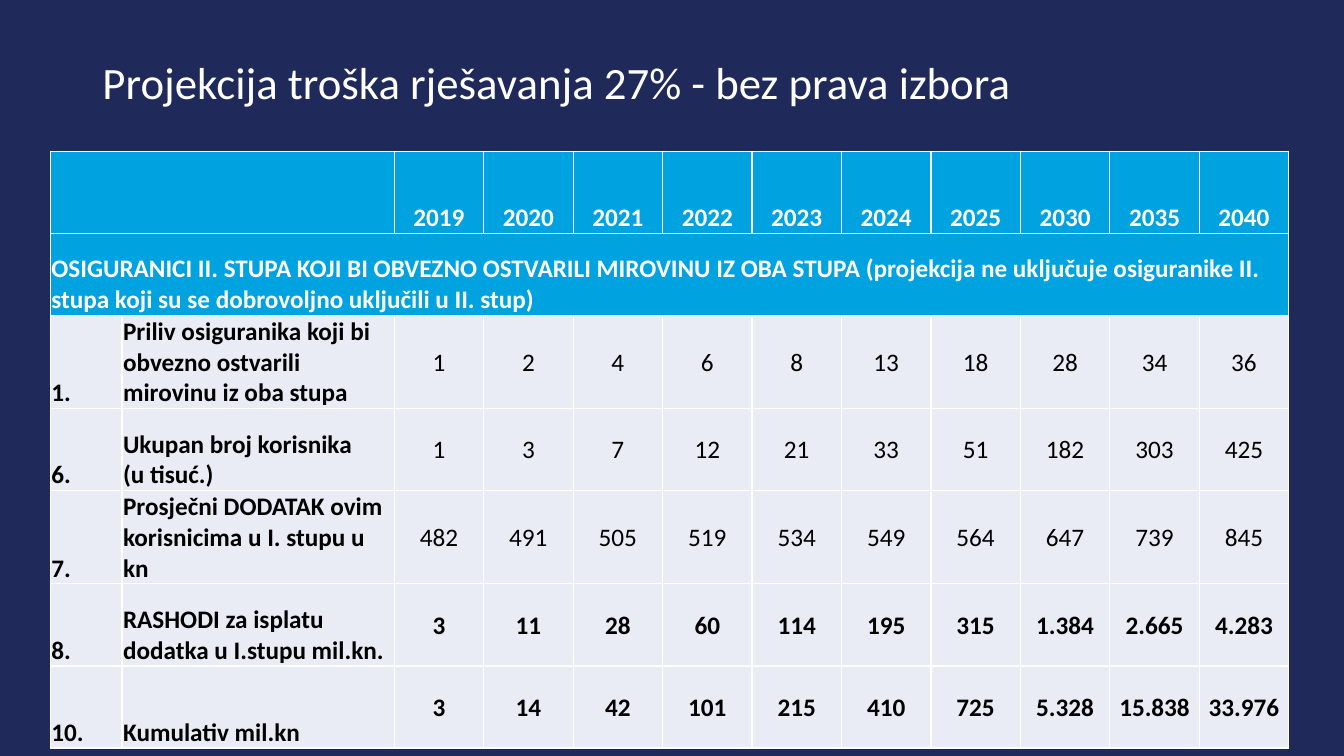
from lxml import etree
from pptx import Presentation
from pptx import util as u
from pptx.dml.color import RGBColor
from pptx.enum import text
from pptx.oxml.ns import qn

NAVY = RGBColor(0x1F, 0x29, 0x5A)
BLUE = RGBColor(0x00, 0xA3, 0xE0)
PALE = RGBColor(0xE9, 0xEB, 0xF5)
WHITE = RGBColor(0xFF, 0xFF, 0xFF)
BLACK = RGBColor(0x00, 0x00, 0x00)
LEFT, CENTER = text.PP_ALIGN.LEFT, text.PP_ALIGN.CENTER
MIDDLE, BOTTOM = text.MSO_ANCHOR.MIDDLE, text.MSO_ANCHOR.BOTTOM

TITLE = "Projekcija troška rješavanja 27% - bez prava izbora"
SECTION = ("OSIGURANICI II. STUPA KOJI BI OBVEZNO OSTVARILI MIROVINU IZ OBA STUPA "
           "(projekcija ne uključuje osiguranike II. stupa koji su se dobrovoljno "
           "uključili u II. stup)")
YEARS = "2019 2020 2021 2022 2023 2024 2025 2030 2035 2040".split()
ROWS = [
    ("1.", "Priliv osiguranika koji bi obvezno ostvarili mirovinu iz oba stupa",
     "1 2 4 6 8 13 18 28 34 36", False),
    ("6.", "Ukupan broj korisnika\n(u tisuć.)",
     "1 3 7 12 21 33 51 182 303 425", False),
    ("7.", "Prosječni DODATAK ovim korisnicima u I. stupu u kn",
     "482 491 505 519 534 549 564 647 739 845", False),
    ("8.", "RASHODI za isplatu dodatka u I.stupu mil.kn.",
     "3 11 28 60 114 195 315 1.384 2.665 4.283", True),
    ("10.", "Kumulativ mil.kn",
     "3 14 42 101 215 410 725 5.328 15.838 33.976", True),
]
COLUMNS = [51.2, 194.4] + [63.9] * len(YEARS)
ROW_HEIGHT = 58.6


def write(tf, content, size=18, color=BLACK, bold=False, align=LEFT, spacing=None):
    p = tf.paragraphs[0]
    p.alignment = align
    p.line_spacing = spacing
    for i, line in enumerate(content.split("\n")):
        if i:
            p.add_line_break()
        r = p.add_run()
        r.text = line
        r.font.name = "Calibri"
        r.font.size = u.Pt(size)
        r.font.bold = bold
        r.font.color.rgb = color


class Deck:
    def __init__(self):
        self.prs = Presentation()
        self.prs.slide_width, self.prs.slide_height = u.Pt(960), u.Pt(540)
        self.s = self.prs.slides.add_slide(self.prs.slide_layouts[5])
        self.s.background.fill.solid()
        self.s.background.fill.fore_color.rgb = NAVY

    def title(self, content, x, y, w, h):
        sp = self.s.shapes.title
        sp.left, sp.top, sp.width, sp.height = map(u.Pt, (x, y, w, h))
        tf = sp.text_frame
        tf.word_wrap = True
        tf.vertical_anchor = MIDDLE
        write(tf, content, size=32, color=WHITE, spacing=0.9)

    def table(self, x, y, widths, rows):
        frame = self.s.shapes.add_table(rows, len(widths), u.Pt(x), u.Pt(y),
                                        u.Pt(sum(widths)), u.Pt(rows * ROW_HEIGHT))
        tbl = frame.table
        for column, width in zip(tbl.columns, widths):
            column.width = u.Pt(width)
        for row in tbl.rows:
            row.height = u.Pt(ROW_HEIGHT)
        return tbl

    def cell(self, cell, content="", fill=PALE, anchor=BOTTOM, **style):
        cell.fill.solid()
        cell.fill.fore_color.rgb = fill
        cell.vertical_anchor = anchor
        cell.margin_left = cell.margin_right = cell.margin_top = u.Pt(0.72)
        cell.margin_bottom = 0
        self.border(cell)
        if content:
            write(cell.text_frame, content, **style)

    def border(self, cell):
        tcPr = cell.fill._xPr
        for i, side in enumerate(("lnL", "lnR", "lnT", "lnB")):
            ln = etree.Element(qn("a:" + side), w=str(u.Pt(1)))
            solid = etree.SubElement(ln, qn("a:solidFill"))
            etree.SubElement(solid, qn("a:srgbClr"), val=str(WHITE))
            tcPr.insert(i, ln)


def main():
    deck = Deck()
    deck.title(TITLE, 66, 28.8, 828, 64)
    tbl = deck.table(36, 108, COLUMNS, len(ROWS) + 2)
    last = len(COLUMNS) - 1
    tbl.cell(0, 0).merge(tbl.cell(0, 1))
    tbl.cell(1, 0).merge(tbl.cell(1, last))

    heading = dict(fill=BLUE, color=WHITE, bold=True)
    for c, year in enumerate(["", ""] + YEARS):
        deck.cell(tbl.cell(0, c), year, align=CENTER, **heading)
        deck.cell(tbl.cell(1, c), "" if c else SECTION, **heading)

    for r, (number, label, values, bold) in enumerate(ROWS, 2):
        deck.cell(tbl.cell(r, 0), number, bold=True)
        deck.cell(tbl.cell(r, 1), label, bold=True)
        for c, value in enumerate(values.split(), 2):
            deck.cell(tbl.cell(r, c), value, anchor=MIDDLE, align=CENTER, bold=bold)

    deck.prs.save("out.pptx")


if __name__ == "__main__":
    main()
